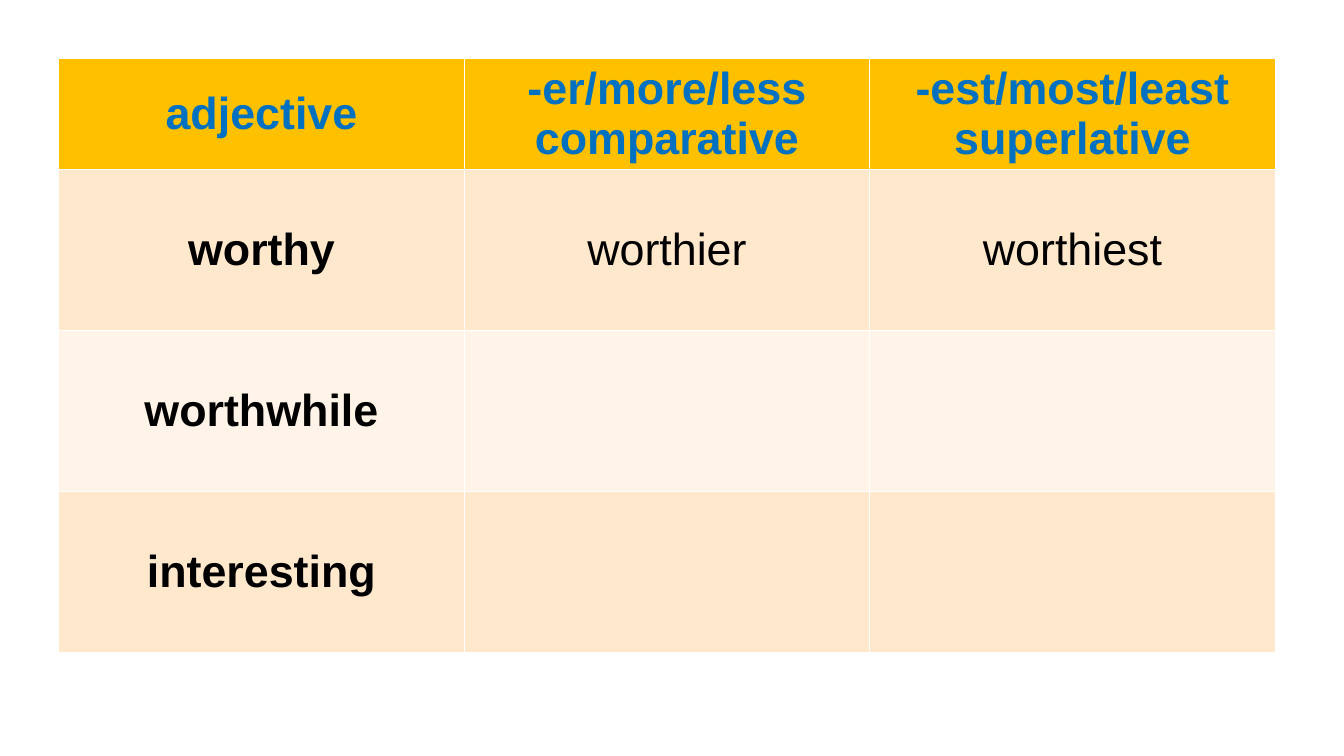
from pptx import Presentation
from pptx.dml.color import RGBColor
from pptx.enum.text import MSO_ANCHOR, PP_ALIGN
from pptx.util import Pt

COLORS = {
    "head": "FFC000",
    "label": "0070C0",
    "text": "000000",
    "odd": "FFE8CC",
    "even": "FFF4E7",
}
ROWS = [
    ["adjective", "-er/more/less\ncomparative", "-est/most/least\nsuperlative"],
    ["worthy", "worthier", "worthiest"],
    ["worthwhile", "", ""],
    ["interesting", "", ""],
]
HEAD = 78.6


def color(name):
    return RGBColor.from_string(COLORS[name])


def write(cell, text, ink, bold):
    cell.vertical_anchor = MSO_ANCHOR.MIDDLE
    frame = cell.text_frame
    for i, line in enumerate(text.split("\n")):
        para = frame.add_paragraph() if i else frame.paragraphs[0]
        para.alignment = PP_ALIGN.CENTER
        if not line:
            continue
        run = para.add_run()
        run.text = line
        run.font.name = "Arial"
        run.font.size = Pt(32)
        run.font.bold = bold
        run.font.color.rgb = color(ink)


def add_grid(slide, left, top, width, height):
    count = len(ROWS[0])
    table = slide.shapes.add_table(
        len(ROWS), count, Pt(left), Pt(top), Pt(width), Pt(height)
    ).table
    for col in table.columns:
        col.width = Pt(width / count)
    body = (height - HEAD) / (len(ROWS) - 1)
    for r, row in enumerate(ROWS):
        table.rows[r].height = Pt(body if r else HEAD)
        band = ("odd" if r % 2 else "even") if r else "head"
        for c, text in enumerate(row):
            cell = table.cell(r, c)
            cell.fill.solid()
            cell.fill.fore_color.rgb = color(band)
            write(cell, text, "text" if r else "label", r == 0 or c == 0)


def main():
    deck = Presentation()
    deck.slide_width, deck.slide_height = Pt(960), Pt(540)
    slide = deck.slides.add_slide(deck.slide_layouts[6])
    add_grid(slide, 42, 42, 869, 423.6)
    deck.save("out.pptx")


if __name__ == "__main__":
    main()
